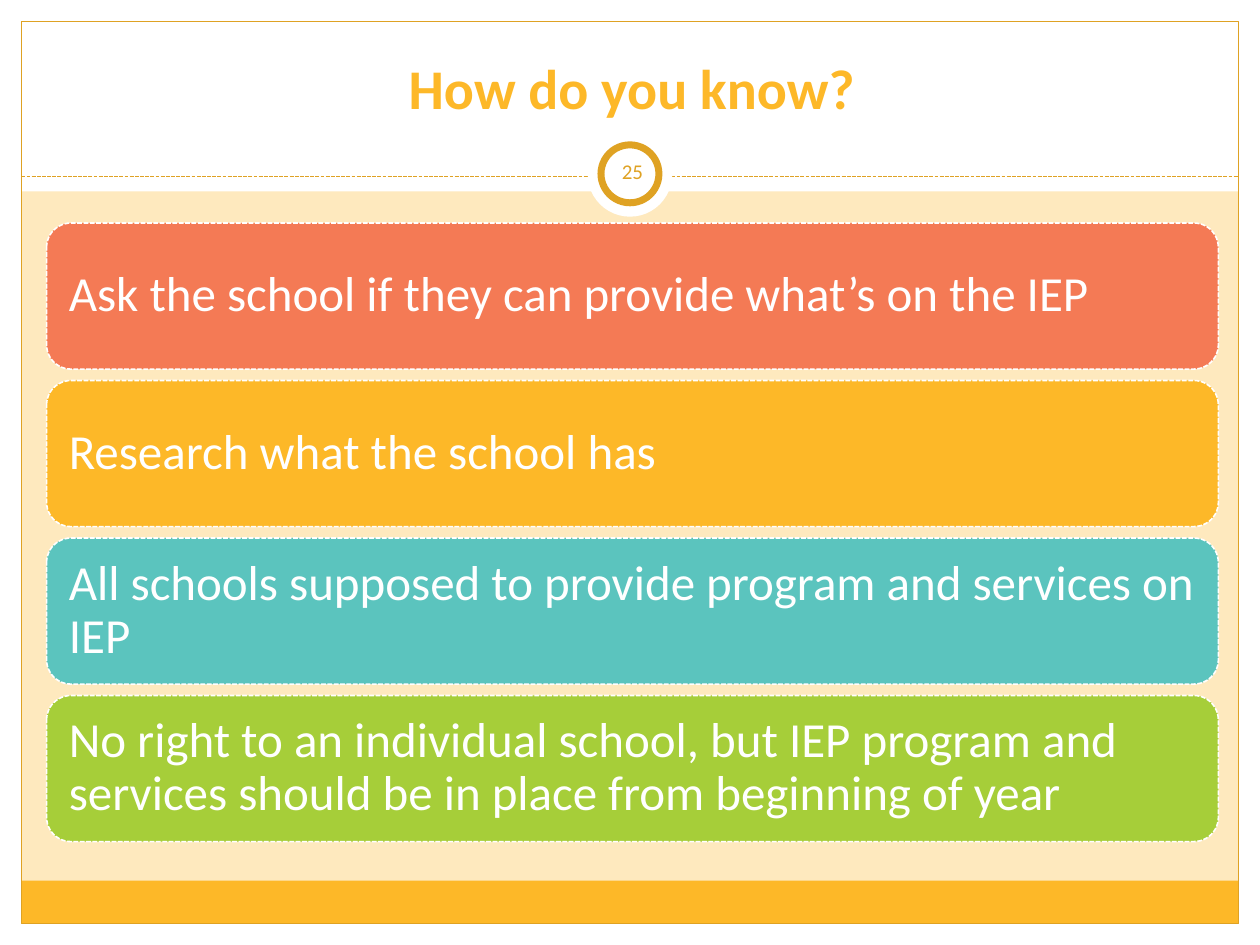
from dataclasses import dataclass

import pptx
import pptx.dml.color
import pptx.enum.dml
import pptx.enum.shapes
import pptx.enum.text
import pptx.oxml.ns
import pptx.util
from lxml import etree

SHAPE = pptx.enum.shapes.MSO_SHAPE
ALIGN = pptx.enum.text.PP_ALIGN
ANCHOR = pptx.enum.text.MSO_ANCHOR
COLUMNS, ROWS = 100, 75


@dataclass(frozen=True)
class Theme:
    font: str = "Calibri"
    white: str = "FFFFFF"
    cream: str = "FEE9BE"
    amber: str = "FDB828"
    gold: str = "DFA223"
    coral: str = "F47A55"
    teal: str = "5BC4BE"
    lime: str = "A6CE39"
    title_size: int = 32
    card_size: int = 28
    number_size: int = 12
    thin: float = 0.75
    card_line: float = 0.9
    ring: int = 4


class SlideBuilder:
    """Draws on one slide; positions are columns and rows of a 100 by 75 grid."""

    def __init__(self, presentation, theme):
        self.theme = theme
        self.column = presentation.slide_width / COLUMNS
        self.row = presentation.slide_height / ROWS
        self.slide = presentation.slides.add_slide(presentation.slide_layouts[6])
        fill = self.slide.background.fill
        fill.solid()
        fill.fore_color.rgb = self.color(theme.cream)

    @staticmethod
    def color(value):
        return pptx.dml.color.RGBColor.from_string(value)

    def grid(self, *lengths):
        """Turn alternating column and row counts into slide lengths."""
        units = (self.column, self.row) * 2
        return [round(length * unit) for length, unit in zip(lengths, units)]

    def outline(self, line, color, width, dashed=False):
        line.color.rgb = self.color(color)
        line.width = pptx.util.Pt(width)
        if dashed:
            line.dash_style = pptx.enum.dml.MSO_LINE.SQUARE_DOT

    def shape(self, kind, box, fill=None, line=None, width=None, dashed=False):
        shape = self.slide.shapes.add_shape(kind, *self.grid(*box))
        shape.shadow.inherit = False
        if fill:
            shape.fill.solid()
            shape.fill.fore_color.rgb = self.color(fill)
        else:
            shape.fill.background()
        if line:
            self.outline(shape.line, line, width, dashed)
        else:
            shape.line.fill.background()
        return shape

    def rule(self, start, end):
        line = self.slide.shapes.add_connector(
            pptx.enum.shapes.MSO_CONNECTOR.STRAIGHT, *self.grid(*start, *end))
        self.outline(line.line, self.theme.gold, self.theme.thin, dashed=True)
        etree.SubElement(line._element.spPr, pptx.oxml.ns.qn("a:effectLst"))

    def add_text(self, shape, text, size, color, align, anchor, inset, bold=False):
        frame = shape.text_frame
        frame.word_wrap = True
        frame.vertical_anchor = anchor
        frame.margin_left, frame.margin_top = self.grid(inset, inset)
        frame.margin_right, frame.margin_bottom = self.grid(inset, inset)
        paragraph = frame.paragraphs[0]
        paragraph.alignment = align
        run = paragraph.add_run()
        run.text = text
        run.font.name = self.theme.font
        run.font.size = pptx.util.Pt(size)
        run.font.bold = bold
        run.font.color.rgb = self.color(color)
        return paragraph

    def label(self, box, *style, **options):
        textbox = self.slide.shapes.add_textbox(*self.grid(*box))
        self.add_text(textbox, *style, **options)

    def card(self, box, text, fill):
        theme = self.theme
        card = self.shape(SHAPE.ROUNDED_RECTANGLE, box, fill,
                          theme.white, theme.card_line, dashed=True)
        paragraph = self.add_text(card, text, theme.card_size, theme.white,
                                  ALIGN.LEFT, ANCHOR.MIDDLE, inset=1.2)
        paragraph.line_spacing = 0.9


def main():
    presentation = pptx.Presentation()
    presentation.slide_width = pptx.util.Inches(10)
    presentation.slide_height = pptx.util.Inches(7.5)
    theme = Theme()
    builder = SlideBuilder(presentation, theme)

    margin = 1.7
    inner_width, inner_height = COLUMNS - 2 * margin, ROWS - 2 * margin
    white_bands = [
        (0, ROWS - margin, COLUMNS, margin),
        (0, 0, COLUMNS, 15.2),
        (0, 0, margin, ROWS),
        (COLUMNS - margin, 0, margin, ROWS),
    ]
    for band in white_bands:
        builder.shape(SHAPE.RECTANGLE, band, theme.white)
    footer_height = 3.4
    builder.shape(SHAPE.RECTANGLE,
                  (margin, ROWS - margin - footer_height, inner_width, footer_height),
                  theme.amber)
    builder.shape(SHAPE.RECTANGLE, (margin, margin, inner_width, inner_height),
                  line=theme.gold, width=theme.thin)
    builder.rule((margin, 14), (COLUMNS - margin, 14))
    builder.shape(SHAPE.OVAL, (46.65, 10.5, 6.7, 6.7), theme.white)
    builder.shape(SHAPE.OVAL, (47.7, 11.5, 4.6, 4.6), theme.white,
                  theme.gold, theme.ring)

    builder.label((3.5, 1.8, 93.3, 8.3), "How do you know?", theme.title_size,
                  theme.amber, ALIGN.CENTER, ANCHOR.BOTTOM, inset=0.5, bold=True)

    cards = [
        ("Ask the school if they can provide what’s on the IEP", theme.coral),
        ("Research what the school has", theme.amber),
        ("All schools supposed to provide program and services on IEP", theme.teal),
        ("No right to an individual school, but IEP program and services "
         "should be in place from beginning of year", theme.lime),
    ]
    card_top, card_height, card_pitch = 17.7, 11.6, 12.5
    for index, (text, fill) in enumerate(cards):
        builder.card((3.7, card_top + index * card_pitch, 93, card_height), text, fill)

    builder.label((47.7, 11.2, 5, 4.8), "25", theme.number_size, theme.gold,
                  ALIGN.CENTER, ANCHOR.MIDDLE, inset=0.5)

    presentation.save("out.pptx")


if __name__ == "__main__":
    main()
